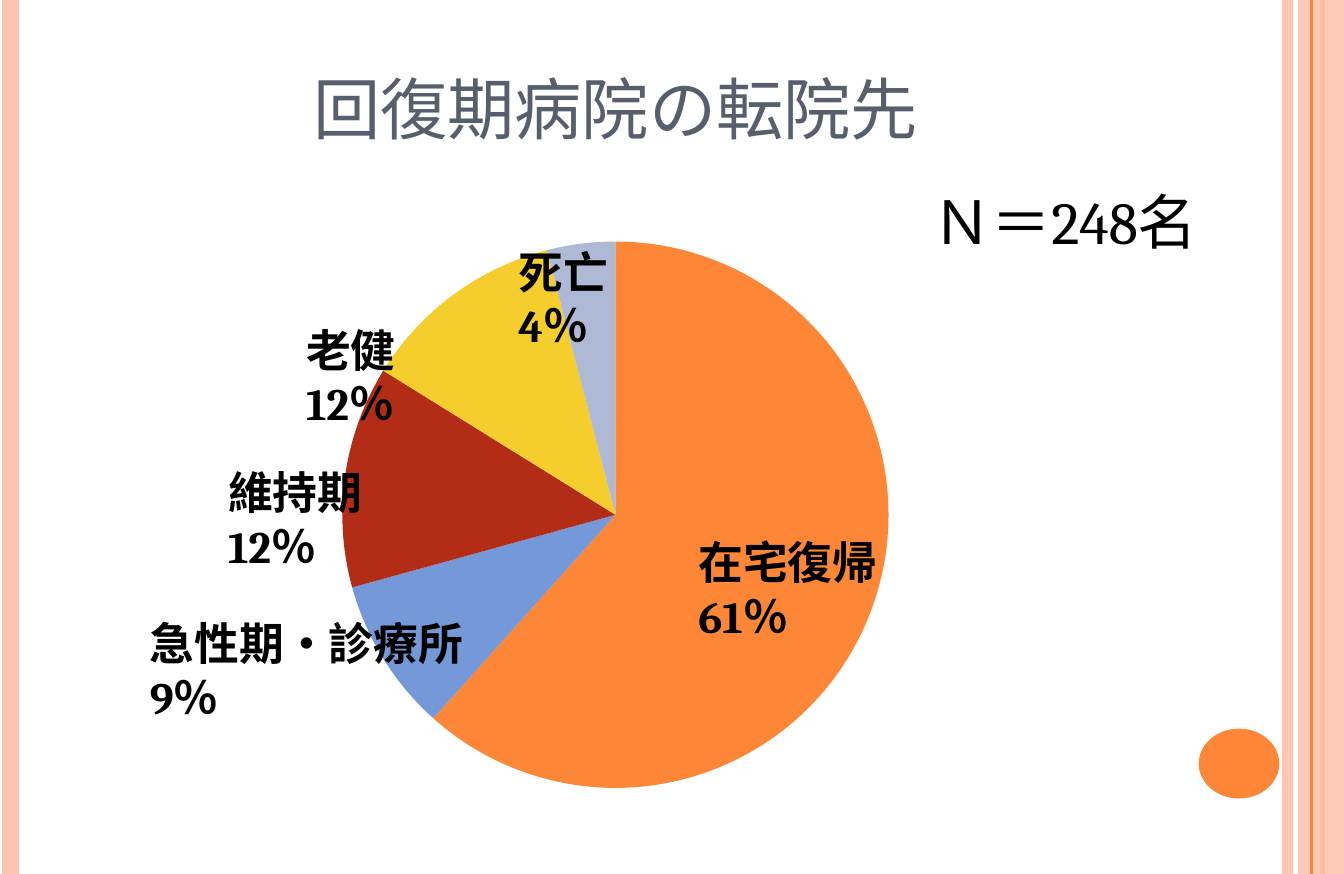
from typing import NamedTuple

from lxml import etree
from pptx import Presentation
from pptx.chart.data import CategoryChartData
from pptx.dml.color import RGBColor
from pptx.enum.chart import XL_CHART_TYPE
from pptx.enum.shapes import MSO_CONNECTOR, MSO_SHAPE
from pptx.enum.text import MSO_ANCHOR, MSO_AUTO_SIZE, PP_ALIGN
from pptx.oxml import parse_xml
from pptx.oxml.ns import nsdecls, qn
from pptx.util import Pt

PIE = XL_CHART_TYPE.PIE
STRAIGHT = MSO_CONNECTOR.STRAIGHT
RECTANGLE, OVAL = MSO_SHAPE.RECTANGLE, MSO_SHAPE.OVAL
MIDDLE, CENTER = MSO_ANCHOR.MIDDLE, PP_ALIGN.CENTER
NO_FIT, GROW = MSO_AUTO_SIZE.NONE, MSO_AUTO_SIZE.SHAPE_TO_FIT_TEXT

EMU_PER_PX = 9144  # 100 px to the inch
WIDTH, HEIGHT = 500, 325
FONT = "Cambria"

BLACK = RGBColor(0x00, 0x00, 0x00)
SLATE = RGBColor(0x57, 0x5F, 0x6D)
PEACH = RGBColor(0xFE, 0xC3, 0xAE)
ORANGE = RGBColor(0xFE, 0x86, 0x37)
BLUE = RGBColor(0x75, 0x98, 0xD9)
RED = RGBColor(0xB3, 0x2C, 0x16)
YELLOW = RGBColor(0xF5, 0xCD, 0x2D)
LAVENDER = RGBColor(0xAE, 0xBA, 0xD5)


class Box(NamedTuple):
    left: int
    top: int
    width: int
    height: int


class Stripe(NamedTuple):
    x: int
    weight: float
    color: RGBColor
    opacity: int = 100


class Slice(NamedTuple):
    value: int
    color: RGBColor


class Label(NamedTuple):
    wording: str
    box: Box
    size: int = 12
    bold: bool = True


STRIPES_BELOW_BAND = [
    Stripe(479, 3, PEACH, 93),
    Stripe(4, 4.5, PEACH),
    Stripe(492, 1.5, ORANGE),
]
STRIPE_ABOVE_BAND = Stripe(488, 0.75, ORANGE)
BAND = Box(483, 0, 17, HEIGHT)
DOT = Box(446, 271, 30, 26)
TITLE = Box(25, 13, 408, 54)
CHART = Box(25, 76, 408, 231)
PIE_LAYOUT = {"x": 0.25, "y": 0.06, "w": 0.5, "h": 0.88}

SLICES = [
    Slice(61, ORANGE),
    Slice(9, BLUE),
    Slice(13, RED),
    Slice(12, YELLOW),
    Slice(4, LAVENDER),
]
LABELS = [
    Label("Ｎ＝248名", Box(337, 64, 121, 37), 16, False),
    Label("在宅復帰　61％", Box(250, 194, 135, 30)),
    Label("老健　12％", Box(104, 115, 101, 30)),
    Label("維持期　12％", Box(75, 168, 118, 30)),
    Label("急性期・診療所　9％", Box(46, 224, 167, 30)),
    Label("死亡　4％", Box(183, 86, 92, 30)),
]


def px(length: int) -> int:
    return length * EMU_PER_PX


def emu(box: Box) -> list[int]:
    return [px(length) for length in box]


def apply(target, **values) -> None:
    for attribute, value in values.items():
        setattr(target, attribute, value)


def set_font(font, size: int, color: RGBColor, bold: bool = False) -> None:
    apply(font, name=FONT, size=Pt(size), bold=bold)
    font.color.rgb = color


def set_opacity(properties, percent: int) -> None:
    """Add an alpha value to the first colour found in the shape properties."""
    color = next(properties.iter(qn("a:srgbClr")))
    etree.SubElement(color, qn("a:alpha")).set("val", str(percent * 1000))


def draw_stripe(slide, stripe: Stripe) -> None:
    line = slide.shapes.add_connector(
        STRAIGHT, px(stripe.x), 0, px(stripe.x), px(HEIGHT))
    line.line.color.rgb = stripe.color
    line.line.width = Pt(stripe.weight)
    properties = line._element.spPr
    etree.SubElement(properties, qn("a:effectLst"))
    if stripe.opacity < 100:
        set_opacity(properties, stripe.opacity)


def draw_filled(slide, preset, box: Box, color: RGBColor, opacity: int = 100) -> None:
    shape = slide.shapes.add_shape(preset, *emu(box))
    shape.shadow.inherit = False
    shape.fill.solid()
    shape.fill.fore_color.rgb = color
    shape.line.fill.background()
    if opacity < 100:
        set_opacity(shape._element.spPr, opacity)


def write_title(slide, wording: str) -> None:
    title = slide.shapes.title
    left, top, width, height = emu(TITLE)
    apply(title, left=left, top=top, width=width, height=height)
    frame = title.text_frame
    frame.text = wording
    apply(frame, vertical_anchor=MIDDLE, auto_size=NO_FIT, word_wrap=True,
          margin_left=px(5), margin_right=px(5), margin_top=px(2), margin_bottom=px(2))
    paragraph = frame.paragraphs[0]
    paragraph.alignment = CENTER
    set_font(paragraph.runs[0].font, 18, SLATE)


def draw_pie(slide) -> None:
    chart_data = CategoryChartData()
    chart_data.categories = [str(n) for n in range(1, len(SLICES) + 1)]
    chart_data.add_series("Series 1", [part.value for part in SLICES])
    chart = slide.shapes.add_chart(PIE, *emu(CHART), chart_data).chart
    apply(chart, has_legend=False, has_title=False)
    set_font(chart.font, 10, BLACK)

    plot = chart.plots[0]
    plot.vary_by_categories = True
    for index, part in enumerate(SLICES):
        slice_format = plot.series[0].points[index].format
        slice_format.fill.solid()
        slice_format.fill.fore_color.rgb = part.color
        slice_format.line.fill.background()

    plot_area = chart._chartSpace.chart.plotArea
    for automatic in plot_area.findall(qn("c:layout")):
        plot_area.remove(automatic)
    sizes = "".join(f'<c:{key} val="{value}"/>' for key, value in PIE_LAYOUT.items())
    plot_area.insert(0, parse_xml(
        f'<c:layout {nsdecls("c")}><c:manualLayout><c:layoutTarget val="inner"/>'
        f'<c:xMode val="edge"/><c:yMode val="edge"/>{sizes}</c:manualLayout></c:layout>'))


def write_label(slide, label: Label) -> None:
    frame = slide.shapes.add_textbox(*emu(label.box)).text_frame
    frame.text = label.wording
    apply(frame, word_wrap=True, auto_size=GROW)
    set_font(frame.paragraphs[0].runs[0].font, label.size, BLACK, label.bold)


def main() -> None:
    presentation = Presentation()
    apply(presentation, slide_width=px(WIDTH), slide_height=px(HEIGHT))
    slide = presentation.slides.add_slide(presentation.slide_layouts[5])

    for stripe in STRIPES_BELOW_BAND:
        draw_stripe(slide, stripe)
    draw_filled(slide, RECTANGLE, BAND, PEACH, 87)
    draw_stripe(slide, STRIPE_ABOVE_BAND)
    draw_filled(slide, OVAL, DOT, ORANGE)
    write_title(slide, "回復期病院の転院先")
    draw_pie(slide)
    for label in LABELS:
        write_label(slide, label)
    presentation.save("out.pptx")


if __name__ == "__main__":
    main()
